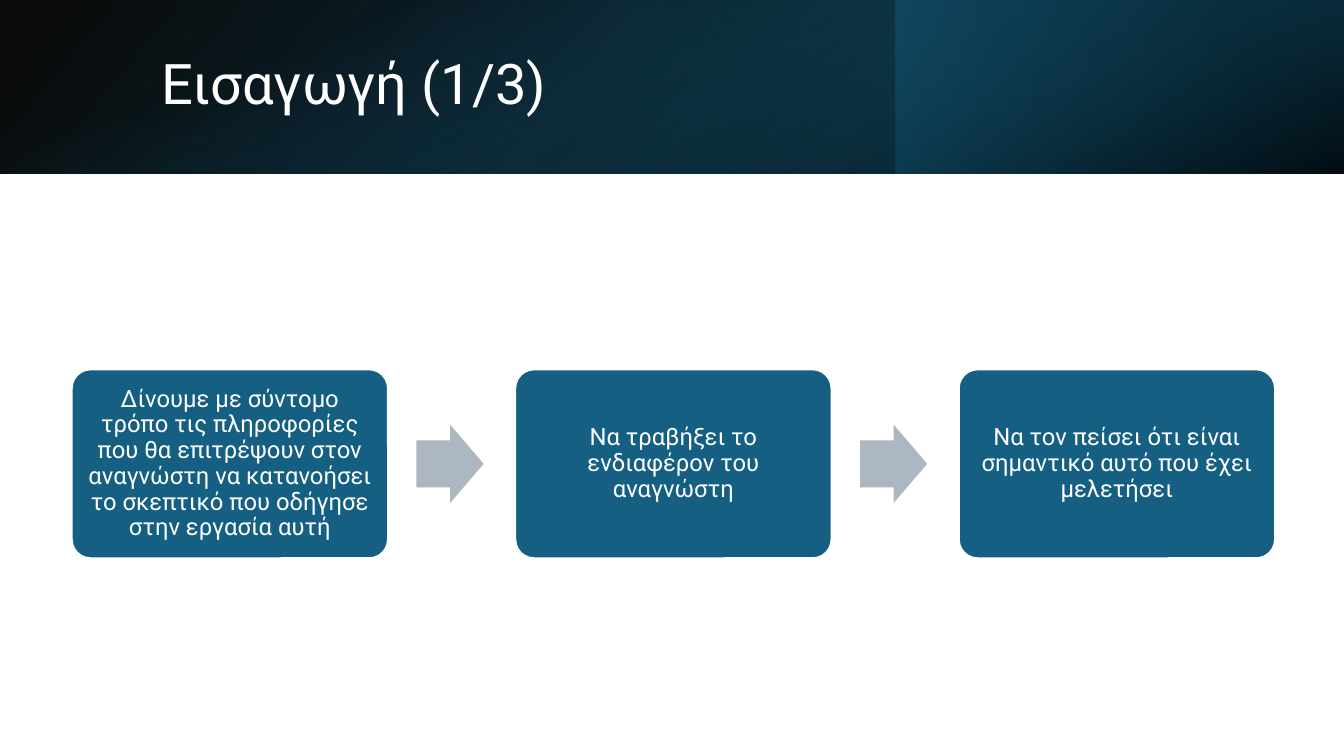
"""Build the introduction slide: a gradient banner and a three-step process."""
from dataclasses import dataclass

from pptx import Presentation
from pptx.dml.color import RGBColor
from pptx.enum import shapes, text
from pptx.oxml import ns, xmlchemy
from pptx.util import Pt

WHITE = RGBColor(0xFF, 0xFF, 0xFF)
BLACK = RGBColor(0x00, 0x00, 0x00)
TEAL = RGBColor(0x15, 0x60, 0x82)
DEEP_TEAL = RGBColor(0x10, 0x48, 0x62)
NIGHT_TEAL = RGBColor(0x0B, 0x30, 0x41)
ARROW_GRAY = RGBColor(0xAC, 0xB7, 0xC1)

FONT = "Roboto"
SLIDE_WIDTH, SLIDE_HEIGHT = 960, 540
BANNER_HEIGHT = 124
CARD_LEFT, CARD_TOP, CARD_WIDTH, CARD_HEIGHT = 51.2, 263.8, 226, 135
CARD_PITCH = 316.8
ARROW_GAP, ARROW_WIDTH, ARROW_HEIGHT = 20.3, 48, 56

STEPS = (
    "Δίνουμε με σύντομο τρόπο τις πληροφορίες που θα επιτρέψουν στον "
    "αναγνώστη να κατανοήσει το σκεπτικό που οδήγησε στην εργασία αυτή",
    "Να τραβήξει το ενδιαφέρον του αναγνώστη",
    "Να τον πείσει ότι είναι σημαντικό αυτό που έχει μελετήσει",
)


@dataclass(frozen=True)
class Box:
    """Position and size in points."""

    left: float
    top: float
    width: float
    height: float

    def lengths(self) -> tuple:
        """Return the four values as lengths."""
        return Pt(self.left), Pt(self.top), Pt(self.width), Pt(self.height)


@dataclass(frozen=True)
class Stop:
    """Gradient stop with its opacity in percent."""

    position: float
    color: RGBColor
    opacity: int = 100


@dataclass(frozen=True)
class Layer:
    """One gradient layer of the banner, its angle counted clockwise."""

    box: Box
    stops: tuple[Stop, Stop]
    angle: float
    rotation: float = 0
    flipped: bool = False


BANNER_LAYERS = (
    Layer(Box(0, 0, SLIDE_WIDTH, BANNER_HEIGHT),
          (Stop(0, BLACK, 96), Stop(1, DEEP_TEAL)), 140, flipped=True),
    Layer(Box(640, 0, 320, BANNER_HEIGHT),
          (Stop(0.19, NIGHT_TEAL, 68), Stop(1, TEAL, 79)), 320, rotation=180),
    Layer(Box((SLIDE_WIDTH - BANNER_HEIGHT) / 2, (BANNER_HEIGHT - SLIDE_WIDTH) / 2,
              BANNER_HEIGHT, SLIDE_WIDTH),
          (Stop(0.23, TEAL, 0), Stop(0.99, BLACK, 74)), 340, rotation=90),
)


def add_shape(slide, kind, box: Box):
    """Add a preset shape without shadow or outline."""
    shape = slide.shapes.add_shape(kind, *box.lengths())
    shape.shadow.inherit = False
    shape.line.fill.background()
    return shape


def add_layer(slide, layer: Layer) -> None:
    """Draw one translucent gradient layer of the banner."""
    shape = add_shape(slide, shapes.MSO_SHAPE.RECTANGLE, layer.box)
    shape.rotation = layer.rotation
    properties = shape._element.spPr
    if layer.flipped:
        properties.find(ns.qn("a:xfrm")).set("flipH", "1")
    shape.fill.gradient()
    shape.fill.gradient_angle = 360 - layer.angle
    for gradient_stop, stop in zip(shape.fill.gradient_stops, layer.stops):
        gradient_stop.position = stop.position
        gradient_stop.color.rgb = stop.color
    colors = properties.iter(ns.qn("a:srgbClr"))
    for color, stop in zip(list(colors), layer.stops):
        alpha = xmlchemy.OxmlElement("a:alpha")
        alpha.set("val", str(stop.opacity * 1000))
        color.append(alpha)


def write_text(shape, content: str, *, size: float, align=text.PP_ALIGN.LEFT,
               side_inset: float = 7.2, end_inset: float = 3.6) -> None:
    """Write one vertically centred white paragraph into a shape."""
    frame = shape.text_frame
    frame.word_wrap = True
    frame.vertical_anchor = text.MSO_ANCHOR.MIDDLE
    frame.margin_left = frame.margin_right = Pt(side_inset)
    frame.margin_top = frame.margin_bottom = Pt(end_inset)
    paragraph = frame.paragraphs[0]
    paragraph.alignment = align
    paragraph.line_spacing = 0.9
    run = paragraph.add_run()
    run.text = content
    run.font.name = FONT
    run.font.size = Pt(size)
    run.font.color.rgb = WHITE


def add_card(slide, left: float, content: str) -> None:
    """Draw one rounded step card."""
    card = add_shape(slide, shapes.MSO_SHAPE.ROUNDED_RECTANGLE,
                     Box(left, CARD_TOP, CARD_WIDTH, CARD_HEIGHT))
    card.adjustments[0] = 0.1
    card.fill.solid()
    card.fill.fore_color.rgb = TEAL
    card.line.color.rgb = WHITE
    card.line.width = Pt(1.5)
    write_text(card, content, size=17, align=text.PP_ALIGN.CENTER,
               side_inset=5, end_inset=5)


def add_arrow(slide, left: float) -> None:
    """Draw the block arrow that leads to the next card."""
    top = CARD_TOP + (CARD_HEIGHT - ARROW_HEIGHT) / 2
    arrow = add_shape(slide, shapes.MSO_SHAPE.RIGHT_ARROW,
                      Box(left, top, ARROW_WIDTH, ARROW_HEIGHT))
    arrow.adjustments[0] = 0.6
    arrow.adjustments[1] = 0.5
    arrow.fill.solid()
    arrow.fill.fore_color.rgb = ARROW_GRAY


def main() -> None:
    """Build and save the presentation."""
    presentation = Presentation()
    presentation.slide_width = Pt(SLIDE_WIDTH)
    presentation.slide_height = Pt(SLIDE_HEIGHT)
    slide = presentation.slides.add_slide(presentation.slide_layouts[6])
    for layer in BANNER_LAYERS:
        add_layer(slide, layer)
    title = slide.shapes.add_textbox(*Box(108, 27.4, 790.5, 69).lengths())
    write_text(title, "Εισαγωγή (1/3)", size=40)
    for index, step in enumerate(STEPS):
        left = CARD_LEFT + index * CARD_PITCH
        if index:
            add_arrow(slide, left - CARD_PITCH + CARD_WIDTH + ARROW_GAP)
        add_card(slide, left, step)
    presentation.save("out.pptx")


if __name__ == "__main__":
    main()
